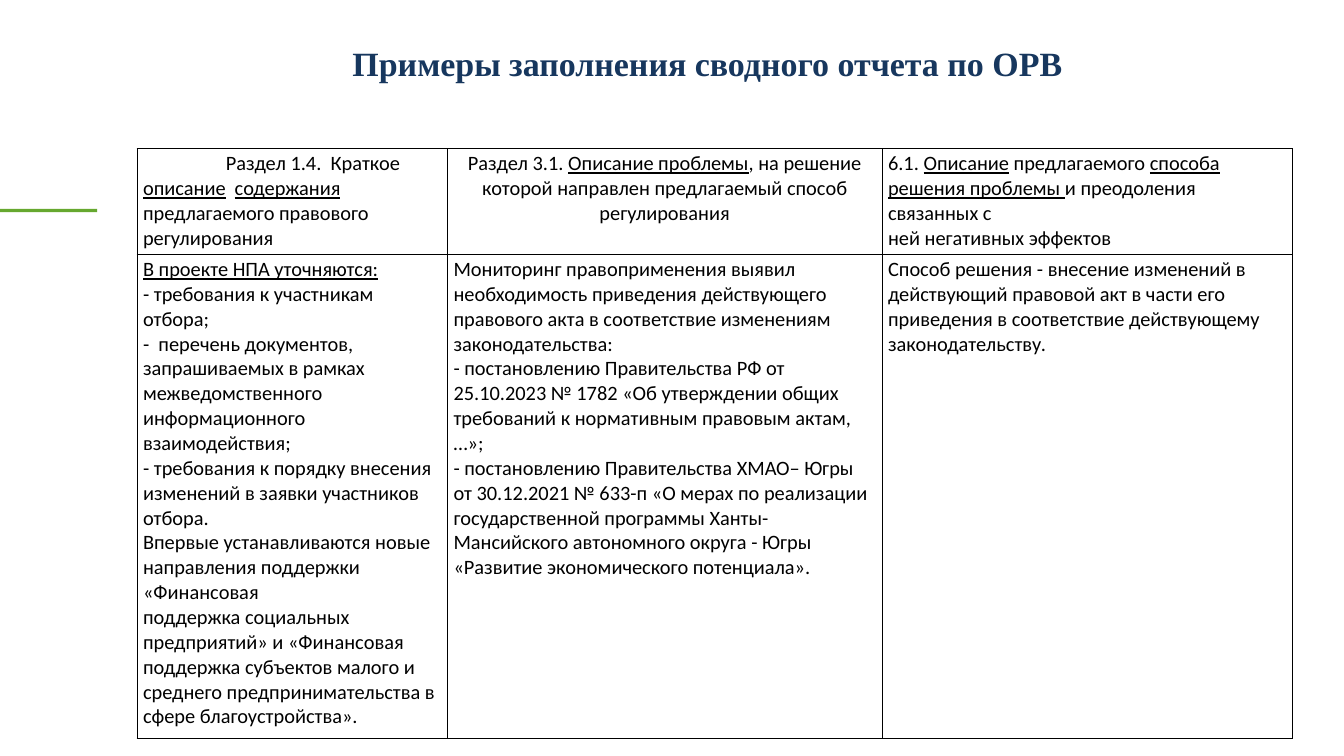
from dataclasses import dataclass

from lxml.etree import SubElement
from pptx import Presentation
from pptx.dml.color import RGBColor
from pptx.enum.shapes import MSO_SHAPE as Shape
from pptx.enum.text import MSO_ANCHOR as Anchor, MSO_AUTO_SIZE as AutoSize, PP_ALIGN as Align
from pptx.oxml.ns import qn
from pptx.util import Pt


@dataclass(frozen=True)
class Theme:
    navy: RGBColor = RGBColor(0x17, 0x37, 0x5E)
    green: RGBColor = RGBColor(0x66, 0xA8, 0x2F)
    black: RGBColor = RGBColor(0, 0, 0)
    white: RGBColor = RGBColor(255, 255, 255)
    title_font: str = "Times New Roman"
    body_font: str = "Calibri"
    title_size: int = 40
    body_size: int = 24
    border: int = 1


THEME = Theme()
COLUMNS = (365.8, 511.9, 483.8)
ROWS = (115.2, 571)
FIRST_INDENT = 97.5
TAB_STOP = 146

# Underscores enclose underlined words.
HEADINGS = (
    ["Раздел 1.4.  Краткое _описание\tсодержания _предлагаемого правового регулирования"],
    ["Раздел 3.1. _Описание проблемы_, на решение которой направлен предлагаемый "
     "способ регулирования"],
    ["6.1. _Описание_ предлагаемого _способа решения проблемы _и преодоления связанных с",
     "ней негативных эффектов"],
)
ANSWERS = (
    ["_В проекте НПА уточняются:_",
     "- требования к участникам отбора;",
     "-  перечень документов, запрашиваемых в рамках межведомственного "
     "информационного взаимодействия;",
     "- требования к порядку внесения изменений в заявки участников отбора.",
     "Впервые устанавливаются новые направления поддержки «Финансовая",
     "поддержка социальных предприятий» и «Финансовая поддержка субъектов малого "
     "и среднего предпринимательства в сфере благоустройства»."],
    ["Мониторинг правоприменения выявил необходимость приведения действующего "
     "правового акта в соответствие изменениям законодательства:",
     "- постановлению Правительства РФ от 25.10.2023 № 1782 «Об утверждении общих "
     "требований к нормативным правовым актам, …»;",
     "- постановлению Правительства ХМАО– Югры от 30.12.2021 № 633-п «О мерах по "
     "реализации государственной программы Ханты-Мансийского автономного округа - "
     "Югры «Развитие экономического потенциала»."],
    ["Способ решения - внесение изменений в действующий правовой акт в части его "
     "приведения в соответствие действующему законодательству."],
)


def style_font(font, name, size, color, bold=False):
    font.name = name
    font.size = Pt(size)
    font.bold = bold
    font.color.rgb = color


def add_title(slide, left, top, width, height):
    title = slide.shapes.title
    title.left, title.top, title.width, title.height = map(Pt, (left, top, width, height))
    frame = title.text_frame
    frame.text = "Примеры заполнения сводного отчета по ОРВ"
    frame.auto_size = AutoSize.NONE
    frame.vertical_anchor = Anchor.TOP
    heading = frame.paragraphs[0]
    heading.alignment = Align.CENTER
    style_font(heading.font, THEME.title_font, THEME.title_size, THEME.navy, True)


def add_accent(slide, left, top, width, height):
    accent = slide.shapes.add_shape(Shape.RECTANGLE, *map(Pt, (left, top, width, height)))
    accent.shadow.inherit = False
    accent.fill.solid()
    accent.fill.fore_color.rgb = THEME.green
    accent.line.fill.background()


def frame_cell(cell):
    properties = cell._tc.get_or_add_tcPr()
    for side in ("lnL", "lnR", "lnT", "lnB"):
        line = SubElement(properties, qn(f"a:{side}"), w=str(Pt(THEME.border)))
        fill = SubElement(line, qn("a:solidFill"))
        SubElement(fill, qn("a:srgbClr"), val=str(THEME.black))
    cell.fill.solid()
    cell.fill.fore_color.rgb = THEME.white


def indent_first_line(paragraph):
    properties = paragraph._p.get_or_add_pPr()
    properties.set("marL", "0")
    properties.set("indent", str(Pt(FIRST_INDENT)))
    tabs = SubElement(properties, qn("a:tabLst"))
    SubElement(tabs, qn("a:tab"), pos=str(Pt(TAB_STOP)), algn="l")


def fill_cell(cell, lines, alignment):
    frame_cell(cell)
    frame = cell.text_frame
    for index, line in enumerate(lines):
        paragraph = frame.add_paragraph() if index else frame.paragraphs[0]
        paragraph.alignment = alignment
        if "\t" in line:
            indent_first_line(paragraph)
        style_font(paragraph.font, THEME.body_font, THEME.body_size, THEME.black)
        for part, words in enumerate(line.split("_")):
            if words:
                run = paragraph.add_run()
                run.text = words
                if part % 2:
                    run.font.underline = True


def add_report_table(slide, left, top, width, height):
    table = slide.shapes.add_table(
        len(ROWS), len(COLUMNS), *map(Pt, (left, top, width, height))).table
    table.first_row = table.horz_banding = False
    for column, column_width in zip(table.columns, COLUMNS):
        column.width = Pt(column_width)
    for row, row_height in zip(table.rows, ROWS):
        row.height = Pt(row_height)
    for row_index, contents in enumerate((HEADINGS, ANSWERS)):
        for column_index, lines in enumerate(contents):
            centred = (row_index, column_index) == (0, 1)
            fill_cell(table.cell(row_index, column_index), lines,
                      Align.CENTER if centred else Align.LEFT)


def main():
    deck = Presentation()
    deck.slide_width, deck.slide_height = Pt(1583.3), Pt(890.6)
    slide = deck.slides.add_slide(deck.slide_layouts[5])
    add_accent(slide, 0, 246.2, 114.5, 3.6)
    add_title(slide, 279.4, 46, 1108, 55.4)
    add_report_table(slide, 161.3, 175, sum(COLUMNS), sum(ROWS))
    deck.save("out.pptx")


if __name__ == "__main__":
    main()
